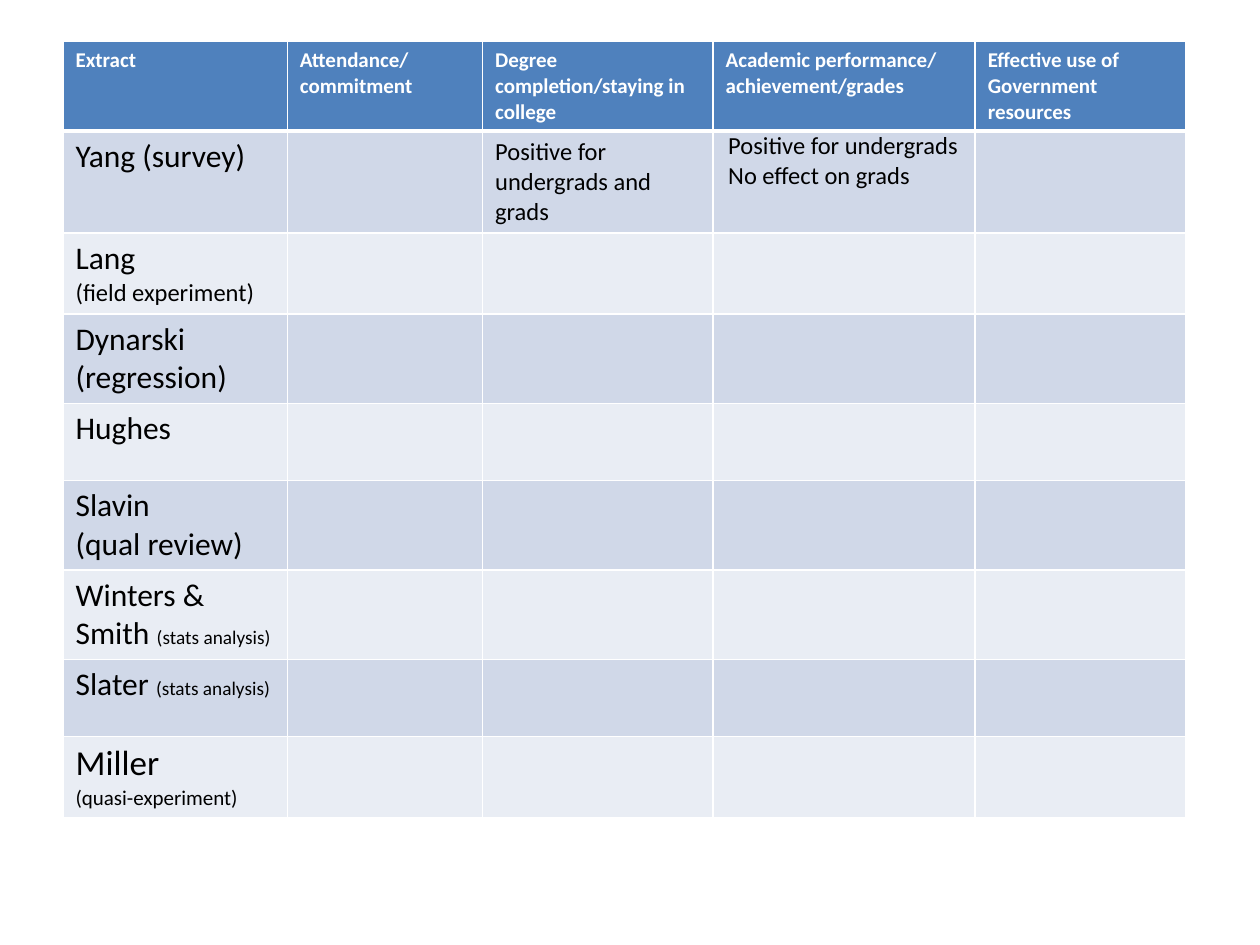
from lxml import etree
from pptx import Presentation
from pptx.dml.color import RGBColor
from pptx.oxml.ns import qn
from pptx.util import Inches, Pt

WHITE, BLACK = "FFFFFF", "000000"
HEADER_FILL = "4F81BD"
BAND_FILLS = ["D0D8E8", "E9EDF4"]
COLUMN_WIDTHS = [1.78, 1.55, 1.83, 2.08, 1.67]
ROW_HEIGHT = 0.61

HEADERS = [
    "Extract",
    "Attendance/\ncommitment",
    "Degree completion/staying in college",
    "Academic performance/\nachievement/grades",
    "Effective use of Government resources",
]
# Each extract is a list of paragraphs, each paragraph a list of (text, size) runs.
EXTRACTS = [
    [[("Yang (survey)", 18)]],
    [[("Lang", 18)], [("(field experiment)", 14)]],
    [[("Dynarski", 18)], [("(regression)", 18)]],
    [[("Hughes", 18)]],
    [[("Slavin", 18)], [("(qual review)", 18)]],
    [[("Winters & Smith ", 18), ("(stats analysis)", 11)]],
    [[("Slater ", 18), ("(stats analysis)", 11)]],
    [[("Miller", 20)], [("(quasi-experiment)", 12)]],
]
COMPLETION, PERFORMANCE = 2, 3
FINDINGS = {
    (1, COMPLETION): [[("Positive for undergrads and grads", 14)]],
    (1, PERFORMANCE): [[("Positive for undergrads", 14)], [("No effect on grads", 14)]],
}


def color(value):
    return RGBColor.from_string(value)


def format_cell(cell, fill, borders):
    """Draw white borders of the given widths in points, then fill the cell."""
    properties = cell._tc.get_or_add_tcPr()
    for side, width in borders.items():
        line = etree.SubElement(properties, qn(f"a:ln{side}"), w=str(Pt(width)))
        solid = etree.SubElement(line, qn("a:solidFill"))
        etree.SubElement(solid, qn("a:srgbClr"), val=WHITE)
    cell.fill.solid()
    cell.fill.fore_color.rgb = color(fill)


presentation = Presentation()
presentation.slide_width, presentation.slide_height = Inches(10), Inches(7.5)
slide = presentation.slides.add_slide(presentation.slide_layouts[6])

contents = {(0, column): [[(line, 12)] for line in header.split("\n")]
            for column, header in enumerate(HEADERS)}
contents.update({(row, 0): extract for row, extract in enumerate(EXTRACTS, start=1)})
contents.update(FINDINGS)

row_count = len(EXTRACTS) + 1
table = slide.shapes.add_table(
    row_count, len(HEADERS), Inches(0.5), Inches(0.33),
    Inches(sum(COLUMN_WIDTHS)), Inches(row_count * ROW_HEIGHT)).table
for column, width in zip(table.columns, COLUMN_WIDTHS):
    column.width = Inches(width)

for row in range(row_count):
    table.rows[row].height = Inches(ROW_HEIGHT)
    is_header = row == 0
    fill = HEADER_FILL if is_header else BAND_FILLS[(row - 1) % 2]
    borders = {"L": 1, "R": 1, "T": 3 if row == 1 else 1, "B": 3 if is_header else 1}
    for column in range(len(HEADERS)):
        cell = table.cell(row, column)
        format_cell(cell, fill, borders)
        for index, runs in enumerate(contents.get((row, column), [])):
            text_frame = cell.text_frame
            paragraph = text_frame.add_paragraph() if index else text_frame.paragraphs[0]
            for text, size in runs:
                run = paragraph.add_run()
                run.text = text
                run.font.color.rgb = color(WHITE if is_header else BLACK)
                font_format = {"name": "Calibri", "size": Pt(size), "bold": is_header}
                for name, value in font_format.items():
                    setattr(run.font, name, value)

performance_margins = {"margin_left": 0.12, "margin_top": 0,
                       "margin_right": 0.12, "margin_bottom": 0}
for name, value in performance_margins.items():
    setattr(table.cell(1, PERFORMANCE), name, Inches(value))

presentation.save("out.pptx")
